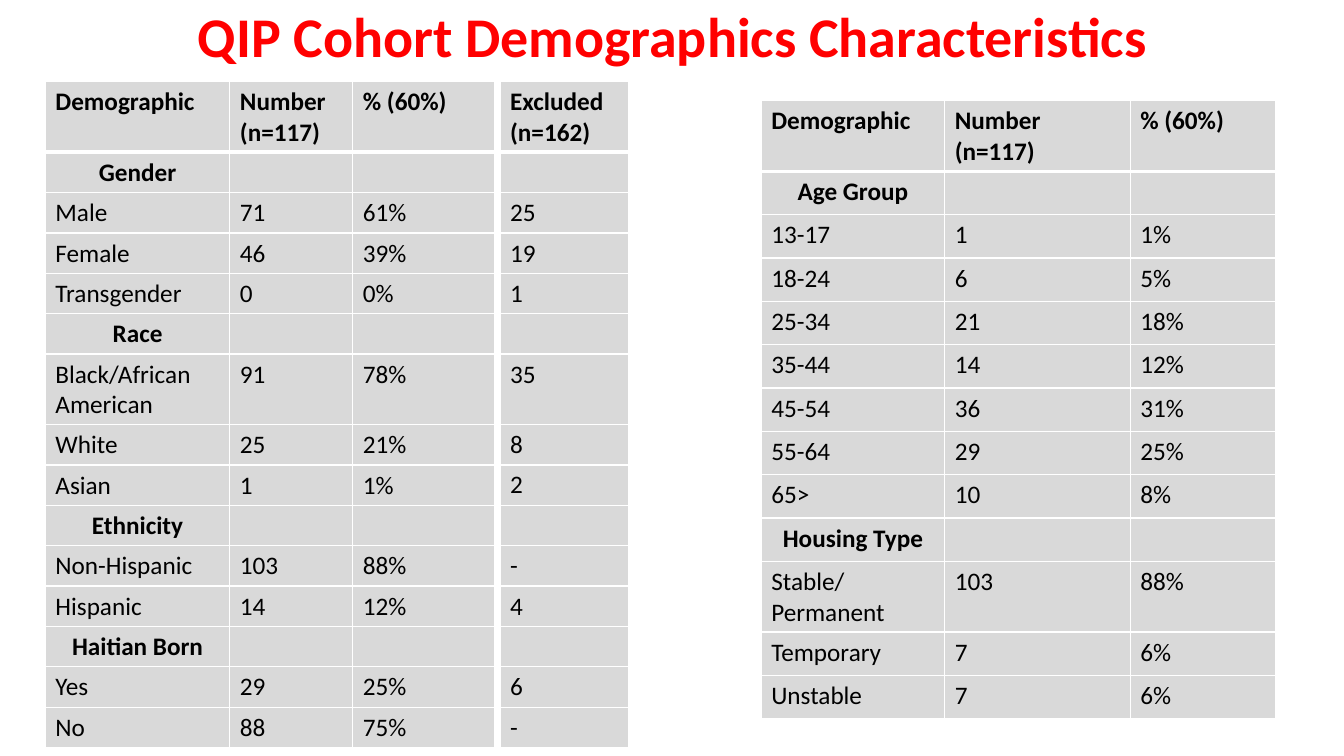
import pptx
import pptx.dml.color
import pptx.enum.text
import pptx.oxml
import pptx.oxml.ns
import pptx.util

Inches = pptx.util.Inches
RGBColor = pptx.dml.color.RGBColor
PP_ALIGN = pptx.enum.text.PP_ALIGN

RED = RGBColor(0xFF, 0x00, 0x00)
BLACK = RGBColor(0x00, 0x00, 0x00)
GRAY = RGBColor(0xD9, 0xD9, 0xD9)
WHITE = RGBColor(0xFF, 0xFF, 0xFF)

HEADER = ("Demographic", "Number (n=117)", "% (60%)")
COHORT = [
    HEADER,
    ("Gender", "", ""),
    ("Male", "71", "61%"),
    ("Female", "46", "39%"),
    ("Transgender", "0", "0%"),
    ("Race", "", ""),
    ("Black/African American", "91", "78%"),
    ("White", "25", "21%"),
    ("Asian", "1", "1%"),
    ("Ethnicity", "", ""),
    ("Non-Hispanic", "103", "88%"),
    ("Hispanic", "14", "12%"),
    ("Haitian Born", "", ""),
    ("Yes", "29", "25%"),
    ("No", "88", "75%"),
]
AGE_HOUSING = [
    HEADER,
    ("Age Group", "", ""),
    ("13-17", "1", "1%"),
    ("18-24", "6", "5%"),
    ("25-34", "21", "18%"),
    ("35-44", "14", "12%"),
    ("45-54", "36", "31%"),
    ("55-64", "29", "25%"),
    ("65>", "10", "8%"),
    ("Housing Type", "", ""),
    ("Stable/Permanent", "103", "88%"),
    ("Temporary", "7", "6%"),
    ("Unstable", "7", "6%"),
]
EXCLUDED = [(v,) for v in ("Excluded (n=162)", "", "25", "19", "1", "", "35", "8",
                           "2", "", "-", "4", "", "6", "-")]


class Deck:
    """Holds the text style and the current slide, and adds elements to it."""

    def __init__(self, prs, font):
        self.font = font
        self.s = prs.slides.add_slide(prs.slide_layouts[6])

    def run(self, p, text, size, color, bold):
        r = p.add_run()
        r.text = text
        style = {"name": self.font, "size": pptx.util.Pt(size), "bold": bold}
        for key, value in style.items():
            setattr(r.font, key, value)
        r.font.color.rgb = color

    def title(self, text, x, y, w, h):
        sp = self.s.shapes.add_textbox(Inches(x), Inches(y), Inches(w), Inches(h))
        tf = sp.text_frame
        tf.word_wrap = True
        tf.vertical_anchor = pptx.enum.text.MSO_ANCHOR.MIDDLE
        p = tf.paragraphs[0]
        p.alignment = PP_ALIGN.CENTER
        p.line_spacing = 0.9
        self.run(p, text, 40, RED, True)

    def borders(self, cell, widths):
        tcPr = cell._tc.get_or_add_tcPr()
        for i, (side, width) in enumerate(widths.items()):
            tcPr.insert(i, pptx.oxml.parse_xml(
                f'<a:ln{side} {pptx.oxml.ns.nsdecls("a")} w="{pptx.util.Pt(width)}">'
                f'<a:solidFill><a:srgbClr val="{WHITE}"/></a:solidFill></a:ln{side}>'))

    def table(self, rows, x, y, cols, heights):
        frame = self.s.shapes.add_table(len(rows), len(cols), Inches(x), Inches(y),
                                        Inches(sum(cols)), Inches(sum(heights)))
        tbl = frame.table
        tbl.horz_banding = False
        for column, width in zip(tbl.columns, cols):
            column.width = Inches(width)
        for i, (row, height) in enumerate(zip(rows, heights)):
            tbl.rows[i].height = Inches(height)
            section = len(row) > 1 and not any(row[1:])
            for j, text in enumerate(row):
                cell = tbl.cell(i, j)
                cell.fill.solid()
                cell.fill.fore_color.rgb = GRAY
                if i == 0:
                    self.borders(cell, {"L": 1, "R": 1, "T": 1, "B": 3})
                if text:
                    p = cell.text_frame.paragraphs[0]
                    if section:
                        p.alignment = PP_ALIGN.CENTER
                    self.run(p, text, 18, BLACK, i == 0 or section)


def main():
    prs = pptx.Presentation()
    prs.slide_width, prs.slide_height = Inches(13.33), Inches(7.5)
    deck = Deck(prs, "Calibri")
    deck.title("QIP Cohort Demographics Characteristics", 0.92, 0, 11.5, 0.78)
    deck.table(COHORT, 0.45, 0.81, [1.83, 1.22, 1.41],
               [0.58] + [0.39] * 5 + [0.68] + [0.39] * 8)
    deck.table(AGE_HOUSING, 7.55, 1, [1.82, 1.84, 1.44], [0.43] * 13)
    deck.table(EXCLUDED, 4.96, 0.81, [1.27],
               [0.7] + [0.4] * 5 + [0.7] + [0.4] * 8)
    prs.save("out.pptx")


if __name__ == "__main__":
    main()
